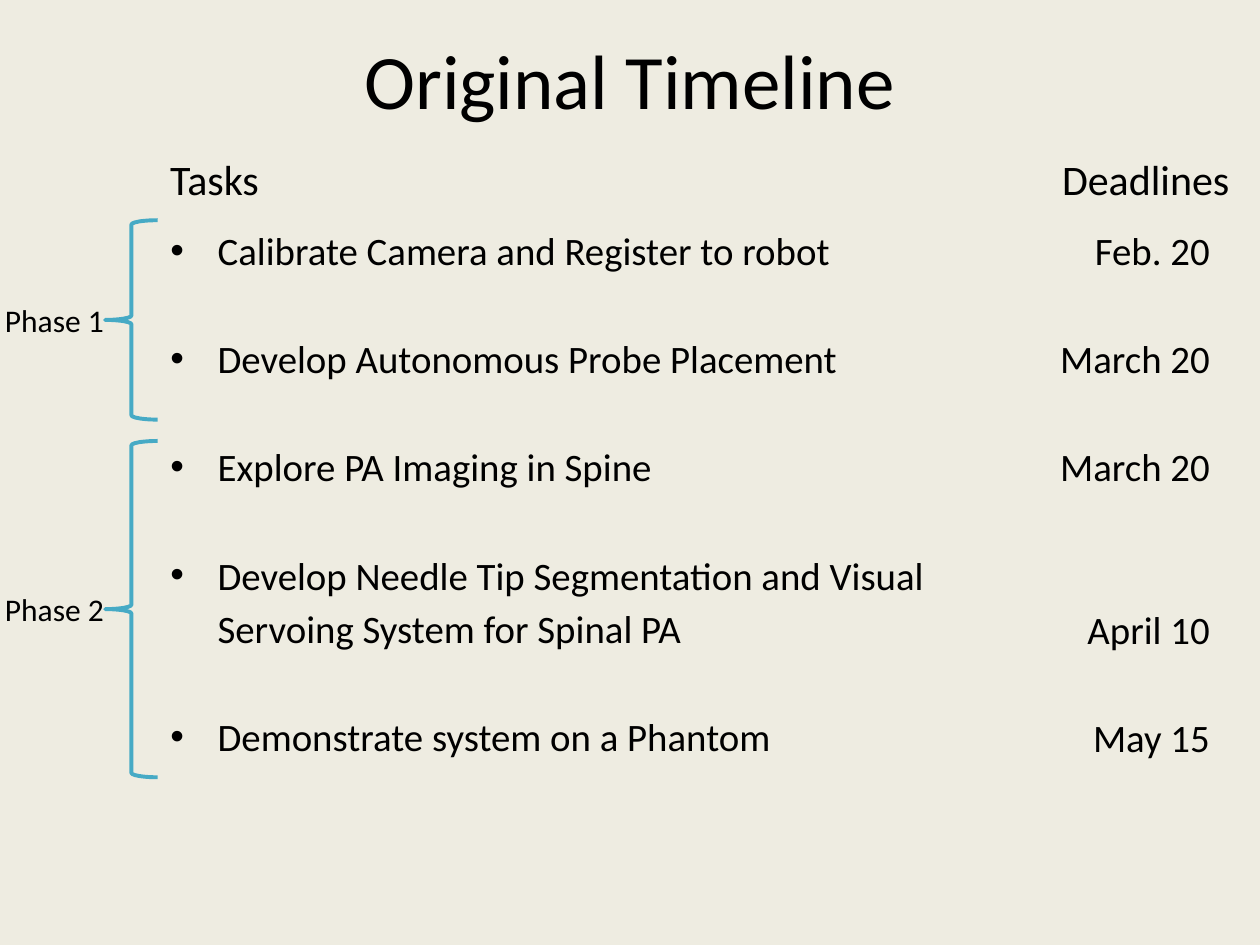
import pptx
import pptx.util
import pptx.dml.color
import pptx.enum.shapes
import pptx.enum.text
import pptx.oxml

Cm = pptx.util.Cm
Pt = pptx.util.Pt
ALIGN = pptx.enum.text.PP_ALIGN
ANCHOR = pptx.enum.text.MSO_ANCHOR

COLORS = {"back": "EEECE1", "text": "000000", "brace": "46AAC5"}
FONT = "Calibri"
SIZE = 22.2
NEAR, FAR, SKIP = 4, 35.2, 66.3  # points above a row

# task, deadline, bullet, space above the task, space above the deadline
ROWS = [
    ("Calibrate Camera and Register to robot", "Feb. 20", True, 0, 0),
    ("Develop Autonomous Probe Placement", "March 20", True, FAR, FAR),
    ("Explore PA Imaging in Spine", "March 20", True, FAR, FAR),
    ("Develop Needle Tip Segmentation and Visual", None, True, FAR, None),
    ("Servoing System for Spinal PA", "April 10", False, NEAR, SKIP),
    ("Demonstrate system on a Phantom", "May 15", True, FAR, FAR),
]
# name, brace top, brace height
PHASES = [("Phase 1", 4.44, 4.02), ("Phase 2", 8.89, 6.78)]


def color(name):
    return pptx.dml.color.RGBColor.from_string(COLORS[name])


def write(para, text, size=SIZE, align=ALIGN.LEFT, above=0):
    run = para.add_run()
    run.text = text
    run.font.name = FONT
    run.font.size = Pt(size)
    run.font.color.rgb = color("text")
    para.alignment = align
    para.space_before = Pt(above)


def place(shape, left, top, width, height):
    shape.left, shape.top = Cm(left), Cm(top)
    shape.width, shape.height = Cm(width), Cm(height)


def unmark(para):
    """Drop the bullet but keep the hanging text edge."""
    props = para._p.get_or_add_pPr()
    props.set("indent", "0")
    props.append(pptx.oxml.parse_xml(
        '<a:buNone xmlns:a="http://schemas.openxmlformats.org/drawingml/2006/main"/>'))


class Page:
    def __init__(self, deck):
        self.slide = deck.slides.add_slide(deck.slide_layouts[1])
        fill = self.slide.background.fill
        fill.solid()
        fill.fore_color.rgb = color("back")

    def title(self, text, box):
        shape = self.slide.shapes.title
        place(shape, *box)
        shape.text_frame.vertical_anchor = ANCHOR.MIDDLE
        write(shape.text_frame.paragraphs[0], text, size=44, align=ALIGN.CENTER)

    def tasks(self, rows, box):
        shape = self.slide.placeholders[1]
        place(shape, *box)
        frame = shape.text_frame
        frame.auto_size = pptx.enum.text.MSO_AUTO_SIZE.NONE
        for i, (task, _, bullet, above, _) in enumerate(rows):
            para = frame.add_paragraph() if i else frame.paragraphs[0]
            write(para, task, above=above)
            if not bullet:
                unmark(para)

    def text(self, lines, box, **style):
        """Add a text box; each line is a text and the space above it."""
        frame = self.slide.shapes.add_textbox(*map(Cm, box)).text_frame
        frame.word_wrap = True
        for i, (line, above) in enumerate(lines):
            para = frame.add_paragraph() if i else frame.paragraphs[0]
            write(para, line, above=above, **style)

    def brace(self, box):
        kind = pptx.enum.shapes.MSO_SHAPE.LEFT_BRACE
        shape = self.slide.shapes.add_shape(kind, *map(Cm, box))
        shape.shadow.inherit = False
        shape.fill.background()
        shape.line.color.rgb = color("brace")
        shape.line.width = Pt(2.25)


def main():
    deck = pptx.Presentation()
    deck.slide_width, deck.slide_height = Cm(25.4), Cm(19.05)
    page = Page(deck)
    page.title("Original Timeline", (1.27, 0, 22.86, 3.18))
    page.tasks(ROWS, (3.18, 4.44, 21.59, 12.57))
    dates = [(row[1], row[4]) for row in ROWS if row[1]]
    page.text(dates, (19.64, 4.44, 5, 12.57), align=ALIGN.RIGHT)
    for head, left, width in (("Tasks", 3.18, 8.46), ("Deadlines", 21.16, 4.24)):
        page.text([(head, 0)], (left, 2.97, width, 1.27), size=24)
    for name, top, height in PHASES:
        page.brace((2.12, top, 1.06, height))
        middle = top + height / 2
        page.text([(name, 0)], (-0.15, middle - 0.51, 2.59, 1.02), size=18)
    deck.save("out.pptx")


if __name__ == "__main__":
    main()
